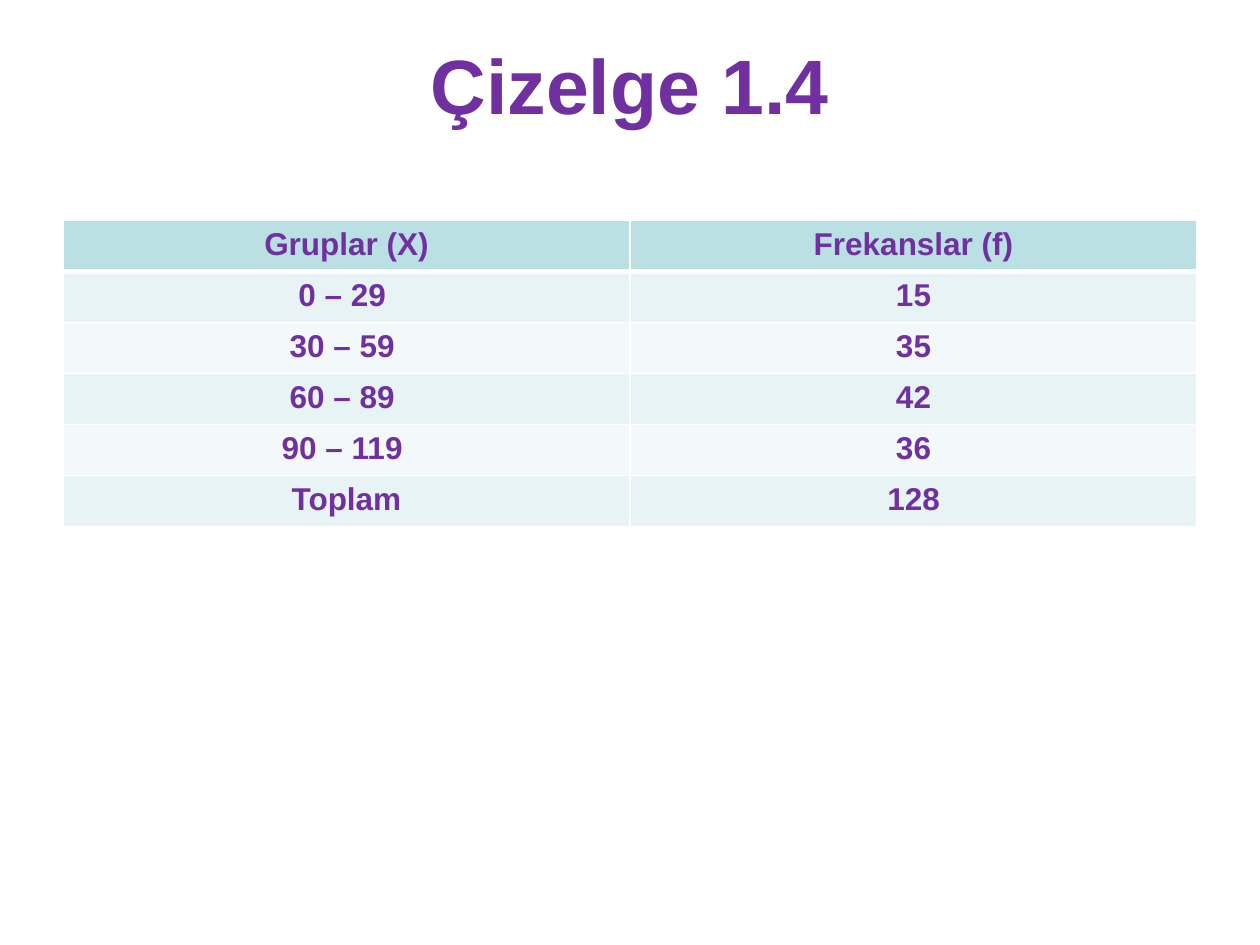
from typing import NamedTuple

from lxml import etree
from pptx import Presentation
from pptx.dml.color import RGBColor
from pptx.enum import text
from pptx.oxml import ns
from pptx.util import Inches, Pt

PURPLE = RGBColor(0x70, 0x30, 0xA0)
WHITE = RGBColor(0xFF, 0xFF, 0xFF)
HEADER = RGBColor(0xBB, 0xE0, 0xE3)
BANDS = (RGBColor(0xE7, 0xF3, 0xF4), RGBColor(0xF3, 0xF9, 0xFA))
FONT = "Arial"


class Row(NamedTuple):
    group: str
    frequency: str


ROWS = [
    Row("Gruplar (X)", "Frekanslar (f)"),
    Row("0 – 29 ", "15"),
    Row("30 – 59 ", "35"),
    Row("60 – 89 ", "42"),
    Row("90 – 119 ", "36"),
    Row("Toplam", "128"),
]


def write(frame, words: str, size: int) -> None:
    frame.text = words
    paragraph = frame.paragraphs[0]
    paragraph.alignment = text.PP_ALIGN.CENTER
    font = paragraph.runs[0].font
    font.name, font.size, font.bold = FONT, Pt(size), True
    font.color.rgb = PURPLE


def add_border(cell, side: str, points: int) -> None:
    line = etree.Element(ns.qn(f"a:ln{side}"), w=str(Pt(points)))
    fill = etree.SubElement(line, ns.qn("a:solidFill"))
    etree.SubElement(fill, ns.qn("a:srgbClr"), val=str(WHITE))
    cell._tc.get_or_add_tcPr().append(line)


def fill_cell(cell, words: str, row: int) -> None:
    write(cell.text_frame, words, 18)
    # Borders come before the fill; the rule under the header is thicker
    for side in "LRTB":
        under_header = (row, side) in ((0, "B"), (1, "T"))
        add_border(cell, side, 3 if under_header else 1)
    cell.fill.solid()
    cell.fill.fore_color.rgb = BANDS[(row - 1) % 2] if row else HEADER


def main() -> None:
    deck = Presentation()
    deck.slide_width, deck.slide_height = Inches(10), Inches(7.5)
    slide = deck.slides.add_slide(deck.slide_layouts[5])
    margin = int(deck.slide_width * 0.05)
    content_width = deck.slide_width - 2 * margin

    # Title
    title = slide.shapes.title
    title.left, title.top = margin, int(deck.slide_height * 0.04)
    title.width, title.height = content_width, Inches(1.25)
    frame = title.text_frame
    frame.auto_size = text.MSO_AUTO_SIZE.NONE
    frame.vertical_anchor = text.MSO_ANCHOR.TOP
    frame.margin_top = 0
    write(frame, "Çizelge 1.4", 44)

    # Frequency table
    table = slide.shapes.add_table(
        len(ROWS), len(Row._fields), margin, Inches(1.75), content_width, Inches(2.43)
    ).table
    for index, row in enumerate(ROWS):
        for column, words in enumerate(row):
            fill_cell(table.cell(index, column), words, index)

    deck.save("out.pptx")


if __name__ == "__main__":
    main()
